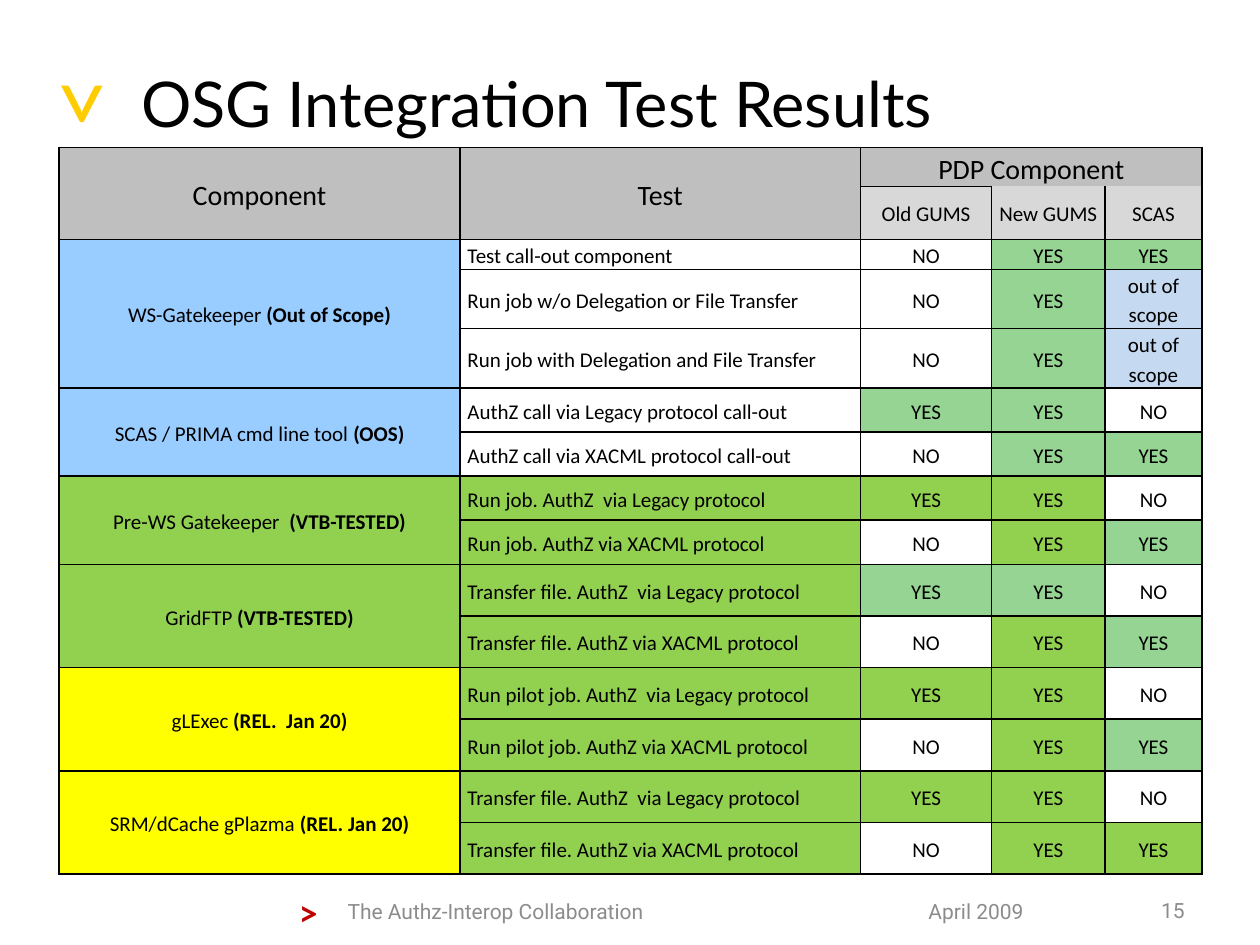
from pptx import Presentation
from pptx.dml.color import RGBColor
from pptx.enum.text import MSO_ANCHOR as Anchor, PP_ALIGN as Align
from pptx.oxml import parse_xml
from pptx.oxml.ns import nsdecls
from pptx.util import Inches, Pt

WIDTH, HEIGHT = Inches(10), Inches(7.5)
BLACK, WHITE, GREY, RED, GOLD = "000000", "FFFFFF", "8C8C8C", "C00000", "FFCC00"
HEAD, SUBHEAD = "BFBFBF", "D8D8D8"
BLUE, GREEN, YELLOW = "99CCFF", "92D050", "FFFF00"

TITLE = "OSG Integration Test Results"
MARKS = [
    (">", (22.7, 93.73, 4.7, 5.87), 20, RED, True, 0),
    (">", (4.6, 3.07, 4.7, 13.47), 54, GOLD, False, 90),
]
FOOTERS = [
    ("April 2009", (72.7, 94.8, 11.7, 3.2), Align.LEFT),
    ("The Authz-Interop Collaboration", (26.6, 94.8, 35.9, 3.2), Align.LEFT),
    ("15", (89.8, 94.8, 5.2, 3.07), Align.RIGHT),
]
HEADINGS = ["Component", "Test", "PDP Component"]
PDP_NAMES = ["Old GUMS", "New GUMS", "SCAS"]
RESULTS = {
    "N": ("NO", WHITE),
    "Y": ("YES", "95D492"),
    "G": ("YES", GREEN),
    "O": ("out of scope", "C5D9F1"),
}
COMPONENTS = [
    ("WS-Gatekeeper ", "(Out of Scope)", BLUE, WHITE, [
        ("Test call-out component", "NYY"),
        ("Run job w/o Delegation or File Transfer", "NYO"),
        ("Run job with Delegation and File Transfer", "NYO")]),
    ("SCAS / PRIMA cmd line tool ", "(OOS)", BLUE, WHITE, [
        ("AuthZ call via Legacy protocol call-out", "YYN"),
        ("AuthZ call via XACML protocol call-out", "NYY")]),
    ("Pre-WS Gatekeeper  ", "(VTB-TESTED)", GREEN, GREEN, [
        ("Run job. AuthZ  via Legacy protocol", "GGN"),
        ("Run job. AuthZ via XACML protocol", "NGY")]),
    ("GridFTP ", "(VTB-TESTED)", GREEN, GREEN, [
        ("Transfer file. AuthZ  via Legacy protocol", "YYN"),
        ("Transfer file. AuthZ via XACML protocol", "NGY")]),
    ("gLExec ", "(REL.  Jan 20)", YELLOW, GREEN, [
        ("Run pilot job. AuthZ  via Legacy protocol", "GGN"),
        ("Run pilot job. AuthZ via XACML protocol", "NGY")]),
    ("SRM/dCache gPlazma ", "(REL. Jan 20)", YELLOW, GREEN, [
        ("Transfer file. AuthZ  via Legacy protocol", "GGN"),
        ("Transfer file. AuthZ via XACML protocol", "NGG")]),
]
TABLE_AREA = (4.7, 15.6, 90.6, 76.8)
COLUMNS = [3.18, 3.18, 1.04, 0.9, 0.77]
ROWS = [0.31, 0.42, 0.24] + [0.47] * 2 + [0.35] * 4 + [0.41] * 6


def rgb(value):
    """Turn a hex string into a colour."""
    return RGBColor.from_string(value)


def area(left, top, width, height):
    """Turn percentages of the slide into lengths."""
    return (int(WIDTH * left / 100), int(HEIGHT * top / 100),
            int(WIDTH * width / 100), int(HEIGHT * height / 100))


def style(para, name, size, color, align=Align.LEFT, bold=False):
    """Set the font and alignment of a paragraph."""
    para.alignment = align
    font = para.font
    font.name, font.size, font.bold = name, Pt(size), bold
    font.color.rgb = rgb(color)


def add_text(page, text, place):
    """Add a wrapping text box and return it."""
    box = page.shapes.add_textbox(*area(*place))
    box.text_frame.word_wrap = True
    box.text_frame.text = text
    return box


def set_borders(cell, sides):
    """Draw the named sides of a cell and clear the others."""
    props = cell._tc.get_or_add_tcPr()
    for index, side in enumerate("LRTB"):
        fill = (f'<a:solidFill><a:srgbClr val="{BLACK}"/></a:solidFill>'
                if side in sides else "<a:noFill/>")
        props.insert(index, parse_xml(
            f'<a:ln{side} {nsdecls("a")} w="{Pt(1)}">{fill}</a:ln{side}>'))


def fill_cell(cell, spans, fill, align=Align.CENTER, size=12, sides="LRTB"):
    """Write plain then bold text into a cell and format it."""
    cell.fill.solid()
    cell.fill.fore_color.rgb = rgb(fill)
    cell.vertical_anchor = Anchor.MIDDLE
    cell.margin_left = cell.margin_right = Inches(0.06)
    cell.margin_top = cell.margin_bottom = 0
    para = cell.text_frame.paragraphs[0]
    para.line_spacing = 1.15
    style(para, "Calibri", size, BLACK, align)
    for index, text in enumerate(spans):
        span = para.add_run()
        span.text = text
        if index:
            span.font.bold = True
    set_borders(cell, sides)


def add_results(page):
    """Add the table of test results."""
    table = page.shapes.add_table(len(ROWS), len(COLUMNS), *area(*TABLE_AREA)).table
    table.first_row = table.horz_banding = False
    for column, width in zip(table.columns, COLUMNS):
        column.width = Inches(width)
    for row, height in zip(table.rows, ROWS):
        row.height = Inches(height)

    for col, heading in enumerate(HEADINGS):
        fill_cell(table.cell(0, col), [heading], HEAD, size=16,
                  sides="LRT" if col == 2 else "LRTB")
    for col in (3, 4):
        fill_cell(table.cell(0, col), [], HEAD, sides="RT")
    for col in (0, 1):
        fill_cell(table.cell(1, col), [], HEAD, sides="LRB")
        table.cell(0, col).merge(table.cell(1, col))
    table.cell(0, 2).merge(table.cell(0, 4))
    for col, name in enumerate(PDP_NAMES, 2):
        fill_cell(table.cell(1, col), [name], SUBHEAD,
                  sides="LRTB" if col == 2 else "LRB")

    row = 2
    for name, status, fill, test_fill, tests in COMPONENTS:
        first = row
        for test, codes in tests:
            fill_cell(table.cell(row, 0), [name, status] if row == first else [], fill)
            fill_cell(table.cell(row, 1), [test], test_fill, Align.LEFT)
            for col, code in enumerate(codes, 2):
                text, color = RESULTS[code]
                fill_cell(table.cell(row, col), [text], color)
            row += 1
        table.cell(first, 0).merge(table.cell(row - 1, 0))


def main():
    """Build the slide and save it."""
    deck = Presentation()
    deck.slide_width, deck.slide_height = WIDTH, HEIGHT
    page = deck.slides.add_slide(deck.slide_layouts[5])

    title = page.shapes.title
    title.left, title.top, title.width, title.height = area(10.2, 5.07, 84.8, 11.6)
    title.text_frame.text = TITLE
    title.text_frame.vertical_anchor = Anchor.MIDDLE
    style(title.text_frame.paragraphs[0], "Lato", 36, BLACK)

    for text, place, size, color, bold, angle in MARKS:
        box = add_text(page, text, place)
        box.rotation = angle
        style(box.text_frame.paragraphs[0], "Lato", size, color, bold=bold)
    for text, place, align in FOOTERS:
        box = add_text(page, text, place)
        box.text_frame.vertical_anchor = Anchor.MIDDLE
        style(box.text_frame.paragraphs[0], "Roboto", 12, GREY, align)
    add_results(page)
    deck.save("out.pptx")


if __name__ == "__main__":
    main()
